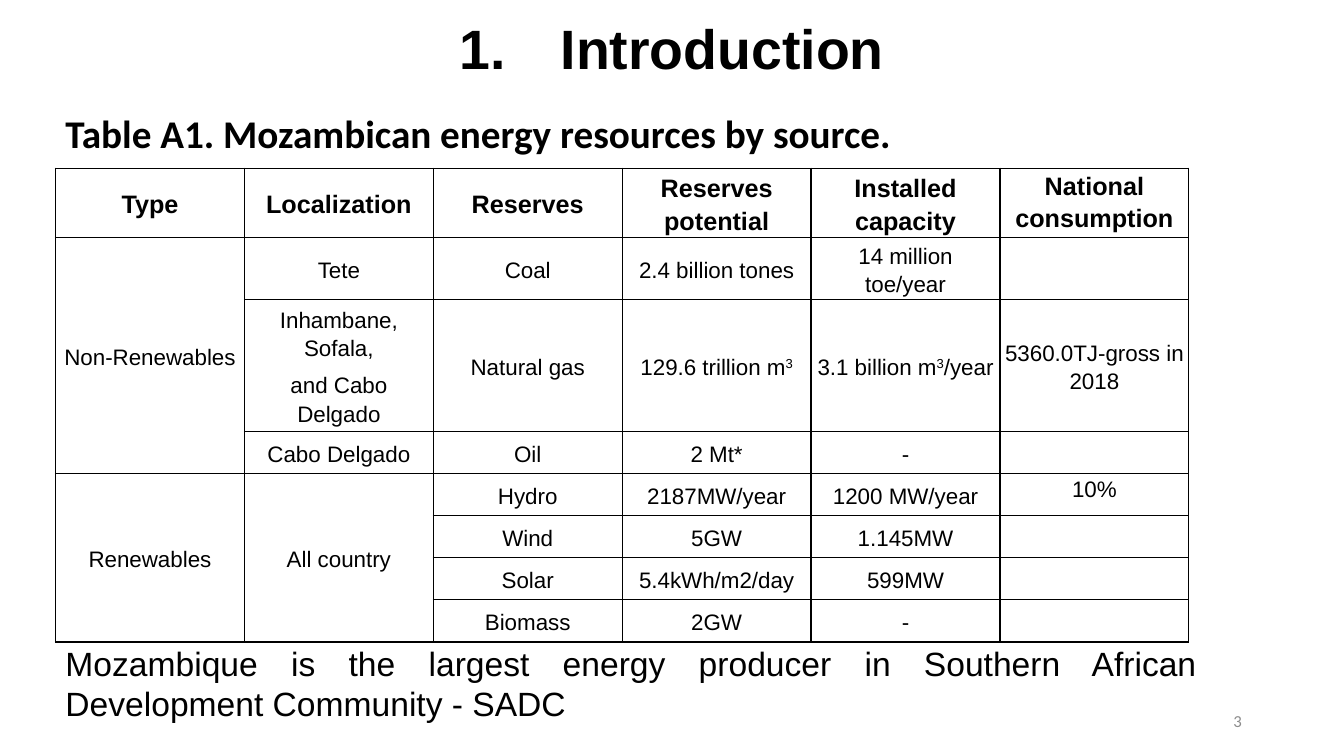
"""Build the introduction slide with the table of Mozambican energy resources."""
from lxml.etree import SubElement
from pptx import Presentation
from pptx.dml.color import RGBColor
from pptx.enum.shapes import MSO_SHAPE
from pptx.enum.text import MSO_ANCHOR, MSO_AUTO_SIZE, PP_ALIGN
from pptx.oxml.ns import qn
from pptx.util import Cm, Pt

COLORS = {"black": "000000", "white": "FFFFFF", "gray": "8C8C8C"}
HEADERS = ["Type", "Localization", "Reserves", "Reserves potential",
           "Installed capacity", "National consumption"]
RESOURCES = [
    ["Non-Renewables", "Tete", "Coal", "2.4 billion tones", "14 million toe/year", ""],
    ["", "Inhambane, Sofala,\nand Cabo Delgado", "Natural gas", "129.6 trillion m^3",
     "3.1 billion m^3^/year", "5360.0TJ-gross in 2018"],
    ["", "Cabo Delgado", "Oil", "2 Mt*", "-", ""],
    ["Renewables", "All country", "Hydro", "2187MW/year", "1200 MW/year", "10%"],
    ["", "", "Wind", "5GW", "1.145MW", ""],
    ["", "", "Solar", "5.4kWh/m2/day", "599MW", ""],
    ["", "", "Biomass", "2GW", "-", ""],
]
ROW_HEIGHTS = [1.58, 1.4, 3.05] + [1.06] * 5
MERGES = [(1, 0, 3, 0), (4, 0, 7, 0), (4, 1, 7, 1)]


def add_text(paragraph, text, size, font="Arial", color="black", bold=False):
    run = paragraph.add_run()
    run.text = text
    run.font.size = Pt(size)
    run.font.name = font
    run.font.bold = bold
    run.font.color.rgb = RGBColor.from_string(COLORS[color])
    return run


def add_borders(cell):
    properties = cell._tc.get_or_add_tcPr()
    for side in ("a:lnL", "a:lnR", "a:lnT", "a:lnB"):
        line = SubElement(properties, qn(side), w=str(Pt(1)))
        fill = SubElement(line, qn("a:solidFill"))
        SubElement(fill, qn("a:srgbClr"), val=COLORS["black"])


presentation = Presentation()
presentation.slide_width = Cm(33.87)
presentation.slide_height = Cm(19.05)
slide = presentation.slides.add_slide(presentation.slide_layouts[5])

title = slide.shapes.title
title.left, title.top, title.width, title.height = Cm(2.33), Cm(0.48), Cm(29.21), Cm(1.65)
title.text_frame.auto_size = MSO_AUTO_SIZE.NONE
title.text_frame.vertical_anchor = MSO_ANCHOR.MIDDLE
heading = title.text_frame.paragraphs[0]
heading.alignment = PP_ALIGN.CENTER
heading.line_spacing = 0.9
numbering = heading._p.get_or_add_pPr()
numbering.set("marL", str(Cm(2.54)))
numbering.set("indent", str(-Cm(2.54)))
SubElement(numbering, qn("a:buFont"), typeface="+mj-lt")
SubElement(numbering, qn("a:buAutoNum"), type="arabicPeriod")
add_text(heading, "Introduction", 39.6, bold=True)

caption = slide.shapes.add_textbox(Cm(1.4), Cm(2.77), Cm(30.15), Cm(15.8)).text_frame
caption.word_wrap = True
caption.paragraphs[0].alignment = PP_ALIGN.JUSTIFY
caption.paragraphs[0].line_spacing = 0.9
add_text(caption.paragraphs[0], "Table A1. Mozambican energy resources by source.", 28,
         "Calibri", bold=True)

resources = slide.shapes.add_table(len(ROW_HEIGHTS), len(HEADERS), Cm(1.4), Cm(4.24),
                                   Cm(28.58), Cm(sum(ROW_HEIGHTS))).table
resources.first_row = False
resources.horz_banding = False
for column in resources.columns:
    column.width = Cm(4.76)
for row, height in zip(resources.rows, ROW_HEIGHTS):
    row.height = Cm(height)

for row_index, entries in enumerate([HEADERS] + RESOURCES):
    for column_index, entry in enumerate(entries):
        cell = resources.cell(row_index, column_index)
        add_borders(cell)
        cell.fill.background()
        cell.margin_left = cell.margin_right = Cm(0.12)
        cell.margin_top = cell.margin_bottom = 0
        is_consumption = column_index == len(HEADERS) - 1
        cell.vertical_anchor = MSO_ANCHOR.TOP if is_consumption else MSO_ANCHOR.MIDDLE
        for line_index, line in enumerate(entry.split("\n")):
            frame = cell.text_frame
            paragraph = frame.add_paragraph() if line_index else frame.paragraphs[0]
            paragraph.alignment = PP_ALIGN.CENTER
            paragraph.line_spacing = 1.15
            paragraph.space_after = Pt(6)
            for part_index, part in enumerate(line.split("^")):
                if part:
                    run = add_text(paragraph, part, 16 if row_index else 18,
                                   bold=row_index == 0)
                    if part_index % 2:
                        run._r.get_or_add_rPr().set("baseline", "30000")
resources.cell(2, 5).margin_top = Cm(0.95)

for top, left, bottom, right in MERGES:
    resources.cell(top, left).merge(resources.cell(bottom, right))

page_number = slide.shapes.add_textbox(Cm(23.93), Cm(17.65), Cm(7.62), Cm(1.02)).text_frame
page_number.word_wrap = True
page_number.vertical_anchor = MSO_ANCHOR.MIDDLE
page_number.paragraphs[0].alignment = PP_ALIGN.RIGHT
add_text(page_number.paragraphs[0], "3", 12, "Calibri", "gray")

conclusion = slide.shapes.add_shape(MSO_SHAPE.RECTANGLE, Cm(1.4), Cm(16.28), Cm(29), Cm(1.88))
conclusion.shadow.inherit = False
conclusion.fill.solid()
conclusion.fill.fore_color.rgb = RGBColor.from_string(COLORS["white"])
conclusion.line.fill.background()
conclusion.text_frame.word_wrap = True
conclusion.text_frame.vertical_anchor = MSO_ANCHOR.MIDDLE
conclusion.text_frame.paragraphs[0].alignment = PP_ALIGN.JUSTIFY
add_text(conclusion.text_frame.paragraphs[0],
         "Mozambique is the largest energy producer in Southern African "
         "Development Community - SADC", 24)

presentation.save("out.pptx")
